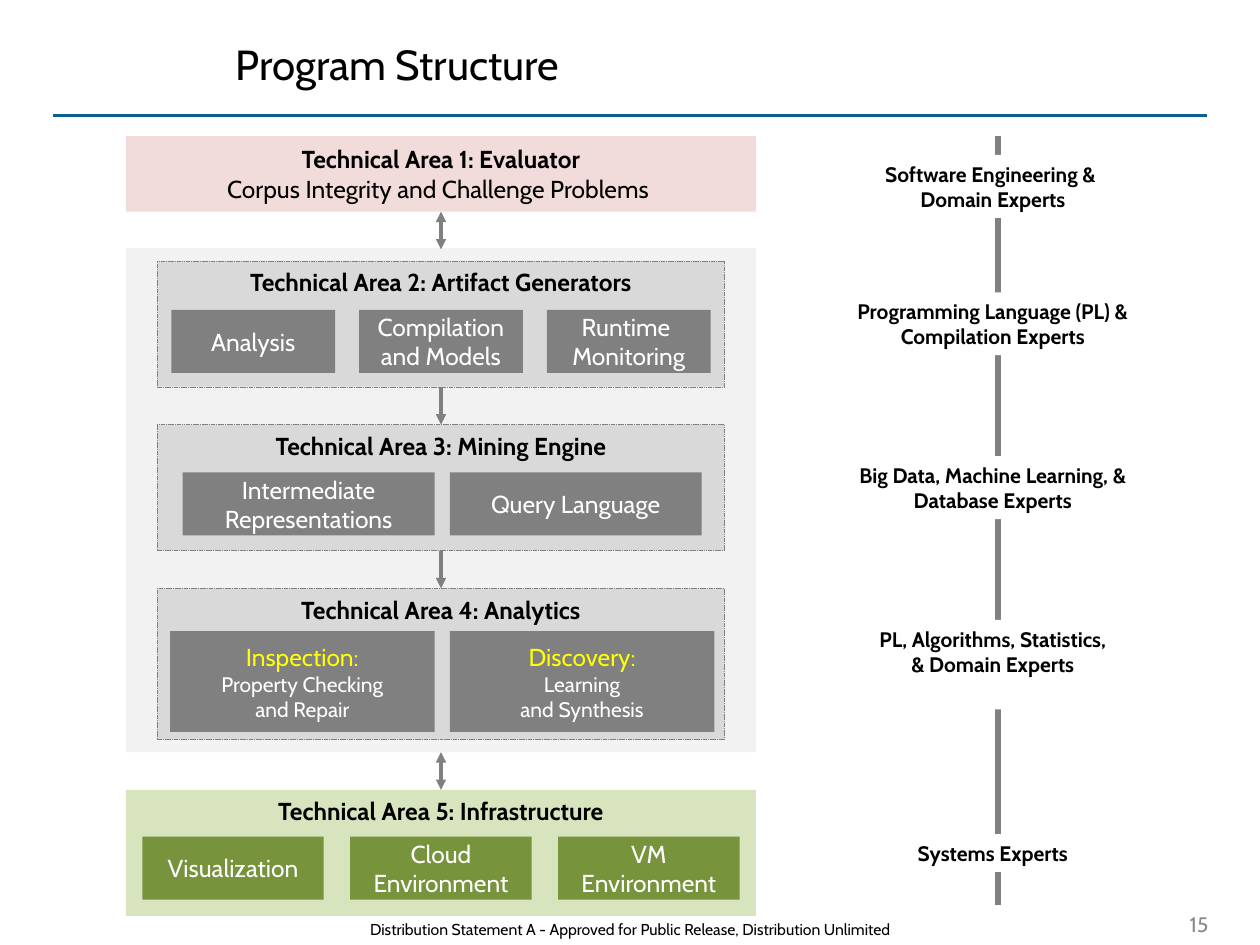
from pptx import Presentation
from pptx.dml.color import RGBColor
from pptx.enum.dml import MSO_LINE
from pptx.enum.shapes import MSO_CONNECTOR, MSO_SHAPE
from pptx.enum.text import MSO_ANCHOR, MSO_AUTO_SIZE, PP_ALIGN
from pptx.oxml.ns import qn
from pptx.util import Inches, Pt
from lxml import etree

WIDTH, HEIGHT = Inches(10), Inches(7.5)
COL, ROW = WIDTH / 100, HEIGHT / 75

RECT, STRAIGHT, DASH = MSO_SHAPE.RECTANGLE, MSO_CONNECTOR.STRAIGHT, MSO_LINE.SQUARE_DOT
TOP, MIDDLE = MSO_ANCHOR.TOP, MSO_ANCHOR.MIDDLE
LEFT, CENTER, RIGHT = PP_ALIGN.LEFT, PP_ALIGN.CENTER, PP_ALIGN.RIGHT
GROW = MSO_AUTO_SIZE.SHAPE_TO_FIT_TEXT

BLACK = RGBColor(0x00, 0x00, 0x00)
WHITE = RGBColor(0xFF, 0xFF, 0xFF)
YELLOW = RGBColor(0xFF, 0xFF, 0x00)
BLUE = RGBColor(0x0F, 0x5E, 0x90)
PINK = RGBColor(0xF2, 0xDC, 0xDB)
LIME = RGBColor(0xD7, 0xE4, 0xBD)
GREEN = RGBColor(0x77, 0x93, 0x3C)
PALE = RGBColor(0xF2, 0xF2, 0xF2)
SILVER = RGBColor(0xD9, 0xD9, 0xD9)
GRAY = RGBColor(0x80, 0x80, 0x80)
NUMBER_GRAY = RGBColor(0x89, 0x89, 0x89)


def style(size, color, bold=False):
    """Return the font values of one text style."""
    return {"name": "Cabin", "size": Pt(size), "bold": bold, "color": color}


TITLE = style(24, BLACK)
HEADING = style(14, BLACK, True)
BODY = style(14, BLACK)
TILE = style(14, WHITE)
TOPIC = style(14, YELLOW)
DETAIL = style(12, WHITE)
EXPERT = style(12, BLACK, True)
PAGE = style(12, NUMBER_GRAY)
FOOTER = style(9, BLACK)


def place(left, top, width, height):
    """Turn grid columns and rows into slide lengths."""
    return [round(v) for v in (left * COL, top * ROW, width * COL, height * ROW)]


def write(sp, lines, align=CENTER, **frame):
    """Write (text, style) lines into a shape, one paragraph each."""
    tf = sp.text_frame
    for key, value in {"word_wrap": True, "vertical_anchor": MIDDLE, **frame}.items():
        setattr(tf, key, value)
    for i, (text, fmt) in enumerate(lines):
        p = tf.add_paragraph() if i else tf.paragraphs[0]
        p.alignment = align
        r = p.add_run()
        r.text = text
        for key, value in fmt.items():
            if key == "color":
                r.font.color.rgb = value
            else:
                setattr(r.font, key, value)


def add_text(s, box, text, fmt, align, **frame):
    """Add a plain text box."""
    write(s.shapes.add_textbox(*place(*box)), [(text, fmt)], align, **frame)


def add_block(s, box, fill, lines=(), dashed=False, **frame):
    """Add a filled rectangle, optionally with a dashed outline."""
    sp = s.shapes.add_shape(RECT, *place(*box))
    sp.shadow.inherit = False
    sp.fill.solid()
    sp.fill.fore_color.rgb = fill
    if dashed:
        sp.line.color.rgb = GRAY
        sp.line.width = Pt(0.25)
        sp.line.dash_style = DASH
    else:
        sp.line.fill.background()
    write(sp, lines, **frame)


def add_tiles(s, box, step, fill, tiles):
    """Add a row of equal tiles, the given step apart."""
    left, top, width, height = box
    for i, lines in enumerate(tiles):
        add_block(s, (left + i * step, top, width, height), fill, lines)


def add_line(s, start, end, color, weight, *arrows):
    """Add a straight line with triangles at the named ends."""
    x1, y1, x2, y2 = place(*start, *end)
    cn = s.shapes.add_connector(STRAIGHT, x1, y1, x2, y2)
    cn.line.color.rgb = color
    cn.line.width = Pt(weight)
    ln = cn.line._get_or_add_ln()
    for arrow in arrows:
        etree.SubElement(ln, qn(f"a:{arrow}"), type="triangle")
    etree.SubElement(cn._element.spPr, qn("a:effectLst"))


def add_areas(s):
    """Add the five technical areas with their tiles."""
    add_block(s, (10, 10.8, 50, 6), PINK, [
        ("Technical Area 1: Evaluator", HEADING),
        ("Corpus Integrity and Challenge Problems ", BODY)])
    add_block(s, (10, 19.7, 50, 40), PALE)
    for top, height, name in (
            (20.7, 10, "Technical Area 2: Artifact Generators"),
            (33.7, 10, "Technical Area 3: Mining Engine"),
            (46.7, 12, "Technical Area 4: Analytics")):
        add_block(s, (12.5, top, 45, height), SILVER, [(name, HEADING)],
                  dashed=True, vertical_anchor=TOP)
    add_block(s, (10, 62.7, 50, 10), LIME,
              [("Technical Area 5: Infrastructure", HEADING)], vertical_anchor=TOP)

    add_tiles(s, (13.6, 24.6, 13, 5), 14.9, GRAY, [
        [("Analysis", TILE)],
        [("Compilation and Models", TILE)],
        [("Runtime ", TILE), ("Monitoring", TILE)]])
    add_tiles(s, (14.5, 37.5, 20, 5), 21.2, GRAY, [
        [("Intermediate Representations", TILE)],
        [("Query Language", TILE)]])
    add_tiles(s, (13.5, 50.1, 21, 8), 22.2, GRAY, [
        [("Inspection:", TOPIC), ("Property Checking", DETAIL), ("and Repair", DETAIL)],
        [("Discovery:", TOPIC), ("Learning", DETAIL), ("and Synthesis", DETAIL)]])
    add_tiles(s, (11.3, 66.4, 14.4, 5), 16.5, GREEN, [
        [("Visualization", TILE)],
        [("Cloud Environment", TILE)],
        [("VM Environment", TILE)]])


def add_arrows(s):
    """Add the arrows that join the areas."""
    for top, ends in (
            (30.7, ["tailEnd"]), (43.7, ["tailEnd"]),
            (16.8, ["headEnd", "tailEnd"]), (59.7, ["headEnd", "tailEnd"])):
        add_line(s, (35, top), (35, top + 3), GRAY, 1.75, *ends)


def add_experts(s):
    """Add the vertical line and the expert groups along it."""
    add_line(s, (79.2, 10.8), (79.2, 71.8), GRAY, 3)
    for top, width, height, wrap, texts in (
            (12.3, 22.1, 5, False, ["Software Engineering & ", "Domain Experts"]),
            (23.2, 25, 5, True, ["Programming Language (PL) & Compilation Experts"]),
            (36.2, 26, 5, True, ["Big Data, Machine Learning, & Database Experts"]),
            (49.2, 21, 7.1, True, ["PL, Algorithms, Statistics, & Domain Experts"]),
            (66.2, 16, 3, True, ["Systems Experts"])):
        add_block(s, (78.8 - width / 2, top, width, height), WHITE,
                  [(text, EXPERT) for text in texts],
                  vertical_anchor=TOP, word_wrap=wrap, auto_size=GROW)


def main():
    """Build the slide and save it."""
    prs = Presentation()
    prs.slide_width, prs.slide_height = WIDTH, HEIGHT
    s = prs.slides.add_slide(prs.slide_layouts[6])
    add_line(s, (4.2, 9.2), (95.8, 9.2), BLUE, 1.75)
    add_text(s, (17.7, 1.7, 78.1, 6.7), "Program Structure", TITLE, LEFT)
    add_areas(s)
    add_arrows(s)
    add_experts(s)
    add_text(s, (88.6, 71.7, 8.3, 3.2), "15", PAGE, RIGHT)
    add_text(s, (27.3, 72.5, 45.4, 2.5),
             "Distribution Statement A - Approved for Public Release, Distribution Unlimited",
             FOOTER, CENTER, vertical_anchor=TOP, auto_size=GROW)
    prs.save("out.pptx")


if __name__ == "__main__":
    main()
